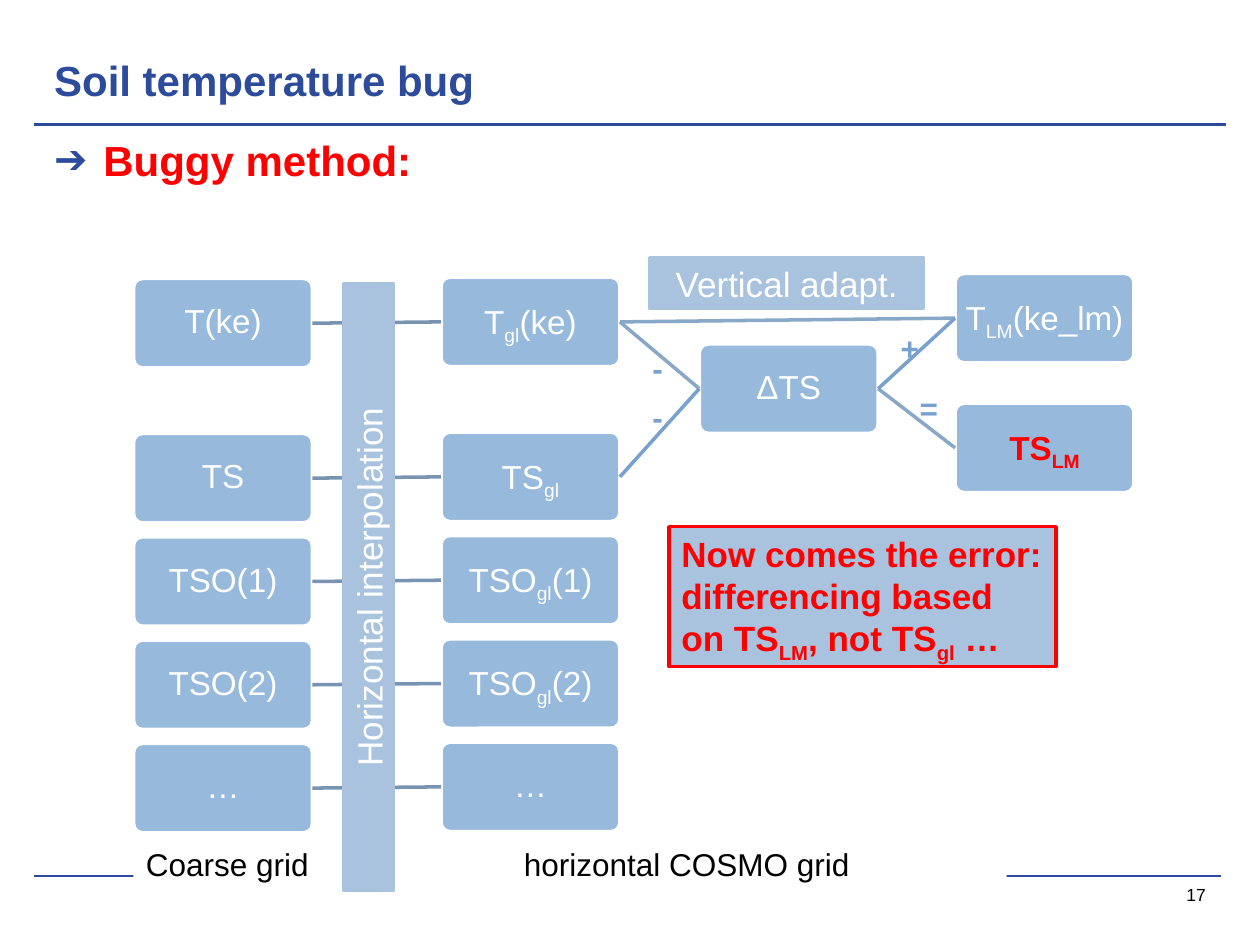
from lxml.etree import SubElement
from pptx import Presentation
from pptx.dml.color import RGBColor
from pptx.enum.shapes import MSO_CONNECTOR as LINK, MSO_SHAPE as SHAPE
from pptx.enum.text import MSO_ANCHOR as ANCHOR, MSO_AUTO_SIZE as FIT, PP_ALIGN as ALIGN
from pptx.oxml.ns import qn
from pptx.util import Inches, Pt

NAVY = RGBColor(0x2D, 0x4B, 0x9B)
RED = RGBColor(0xFF, 0x00, 0x00)
WHITE = RGBColor(0xFF, 0xFF, 0xFF)
BLACK = RGBColor(0x00, 0x00, 0x00)
BOX_BLUE = RGBColor(0x96, 0xB9, 0xDC)
PANEL_BLUE = RGBColor(0xA9, 0xC3, 0xDF)
GRID_LINK = RGBColor(0x78, 0x94, 0xB0)
TREE_LINK = RGBColor(0x88, 0xA8, 0xC8)
SIGN_BLUE = RGBColor(0x79, 0xA1, 0xCE)

deck = Presentation()
deck.slide_width, deck.slide_height = Inches(10), Inches(7.5)
page = deck.slides.add_slide(deck.slide_layouts[1])


def write(box, text, size, color, bold=False, align=ALIGN.LEFT, anchor=ANCHOR.TOP, inset=None):
    frame = box.text_frame
    frame.word_wrap = True
    frame.auto_size = FIT.NONE
    frame.vertical_anchor = anchor
    if inset is not None:
        frame.margin_left = frame.margin_right = Inches(inset)
        frame.margin_top = frame.margin_bottom = Inches(inset)
    para = frame.paragraphs[0]
    para.alignment = align
    para.space_before = Pt(0)
    for index, part in enumerate(text.split("|")):
        if not part:
            continue
        span = para.add_run()
        span.text = part
        span.font.name, span.font.size, span.font.bold = "Arial", Pt(size), bold
        span.font.color.rgb = color
        if index % 2:
            span.font._element.set("baseline", "-25000")
    return para


def draw(kind, left, top, width, height, fill, line=None):
    shape = page.shapes.add_shape(kind, Inches(left), Inches(top), Inches(width), Inches(height))
    shape.shadow.inherit = False
    shape.fill.solid()
    shape.fill.fore_color.rgb = fill
    if line is None:
        shape.line.fill.background()
    else:
        shape.line.color.rgb = line
        shape.line.width = Pt(2)
    return shape


title, body = page.placeholders
for holder, top, height in [(title, 0.36, 0.47), (body, 1.07, 5.75)]:
    holder.left, holder.top = Inches(0.43), Inches(top)
    holder.width, holder.height = Inches(9.14), Inches(height)
write(title, "Soil temperature bug", 24, NAVY, True, anchor=ANCHOR.BOTTOM, inset=0)
method = write(body, "Buggy method:", 24, RED, True, inset=0)
settings = method._p.get_or_add_pPr()
settings.set("marL", str(Inches(0.39)))
settings.set("indent", str(-Inches(0.39)))
SubElement(SubElement(settings, qn("a:buClr")), qn("a:srgbClr")).set("val", str(NAVY))
SubElement(settings, qn("a:buSzPct")).set("val", "95000")
SubElement(settings, qn("a:buFont")).set("typeface", "Arial")
SubElement(settings, qn("a:buChar")).set("char", "➔")

links = []
for y, right, weight in [(0.99, 9.73, 2), (6.95, 9.69, 1.2)]:
    rule = page.shapes.add_connector(LINK.STRAIGHT, Inches(0.27), Inches(y), Inches(right), Inches(y))
    links.append((rule, NAVY, weight))

BOX_WIDTH, BOX_HEIGHT = 1.42, 0.71
COARSE, FINE, DELTA, MODEL = 1.06, 3.5, 5.55, 7.58
ROW_TOPS = [2.21] + [3.44 + 0.82 * row for row in range(4)]
COARSE_NAMES = ["T(ke)", "TS", "TSO(1)", "TSO(2)", "…"]
FINE_NAMES = ["T|gl|(ke)", "TS|gl|", "TSO|gl|(1)", "TSO|gl|(2)", "…"]

nodes = [(COARSE, top, name) for top, name in zip(ROW_TOPS, COARSE_NAMES)]
nodes += [(FINE, top - 0.01, name) for top, name in zip(ROW_TOPS, FINE_NAMES)]
nodes += [(DELTA, 2.73, "ΔTS"), (MODEL, 2.17, "T|LM|(ke_lm)"), (MODEL, 3.2, "TS|LM|")]
boxes = []
for left, top, name in nodes:
    box = draw(SHAPE.ROUNDED_RECTANGLE, left, top, BOX_WIDTH, BOX_HEIGHT, BOX_BLUE, WHITE)
    box.adjustments[0] = 0.1
    wrong = name == "TS|LM|"
    para = write(box, name, 19, RED if wrong else WHITE, wrong, ALIGN.CENTER, ANCHOR.MIDDLE, 0.03)
    para.line_spacing = 0.9
    boxes.append(box)

coarse, fine, (delta, model_air, model_soil) = boxes[:5], boxes[5:10], boxes[10:]
joins = [(start, end, GRID_LINK) for start, end in zip(coarse, fine)]
joins += [
    (fine[0], model_air, TREE_LINK),
    (fine[0], delta, TREE_LINK),
    (delta, model_soil, TREE_LINK),
    (fine[1], delta, SIGN_BLUE),
    (delta, model_air, SIGN_BLUE),
]
for start, end, color in joins:
    join = page.shapes.add_connector(LINK.STRAIGHT, 0, 0, 0, 0)
    join.begin_connect(start, 3)
    join.end_connect(end, 1)
    links.append((join, color, 2))
for link, color, weight in links:
    link.line.color.rgb = color
    link.line.width = Pt(weight)
    SubElement(link._element.spPr, qn("a:effectLst"))

for sign, left, top in [("+", 7.05, 2.56), ("=", 7.2, 3.04), ("-", 5.08, 2.72), ("-", 5.08, 3.11)]:
    box = page.shapes.add_textbox(Inches(left), Inches(top), Inches(0.55), Inches(0.4))
    write(box, sign, 18, SIGN_BLUE, True)

vertical = draw(SHAPE.RECTANGLE, 5.16, 2.05, 2.17, 0.4, PANEL_BLUE, PANEL_BLUE)
write(vertical, "Vertical adapt.", 20, WHITE, align=ALIGN.CENTER, anchor=ANCHOR.MIDDLE)

caption = draw(SHAPE.RECTANGLE, 1.06, 6.66, 6.93, 0.4, WHITE)
grids = write(caption, "Coarse grid\thorizontal COSMO grid", 18, BLACK)
stops = SubElement(grids._p.get_or_add_pPr(), qn("a:tabLst"))
stop = SubElement(stops, qn("a:tab"))
stop.set("pos", str(Inches(3)))
stop.set("algn", "l")

horizontal = draw(SHAPE.RECTANGLE, 0.52, 4.46, 4.81, 0.4, PANEL_BLUE, PANEL_BLUE)
horizontal.rotation = 270
write(horizontal, "Horizontal interpolation", 20, WHITE, align=ALIGN.CENTER, anchor=ANCHOR.MIDDLE)

error = draw(SHAPE.RECTANGLE, 5.31, 4.18, 3.07, 1.11, PANEL_BLUE, RED)
write(error, "Now comes the error: differencing based on TS|LM|, not TS|gl| …", 20, RED, True)

number = page.shapes.add_textbox(Inches(9.06), Inches(6.98), Inches(0.51), Inches(0.24))
write(number, "17", 10, BLACK, align=ALIGN.RIGHT, anchor=ANCHOR.MIDDLE, inset=0)

deck.save("out.pptx")
